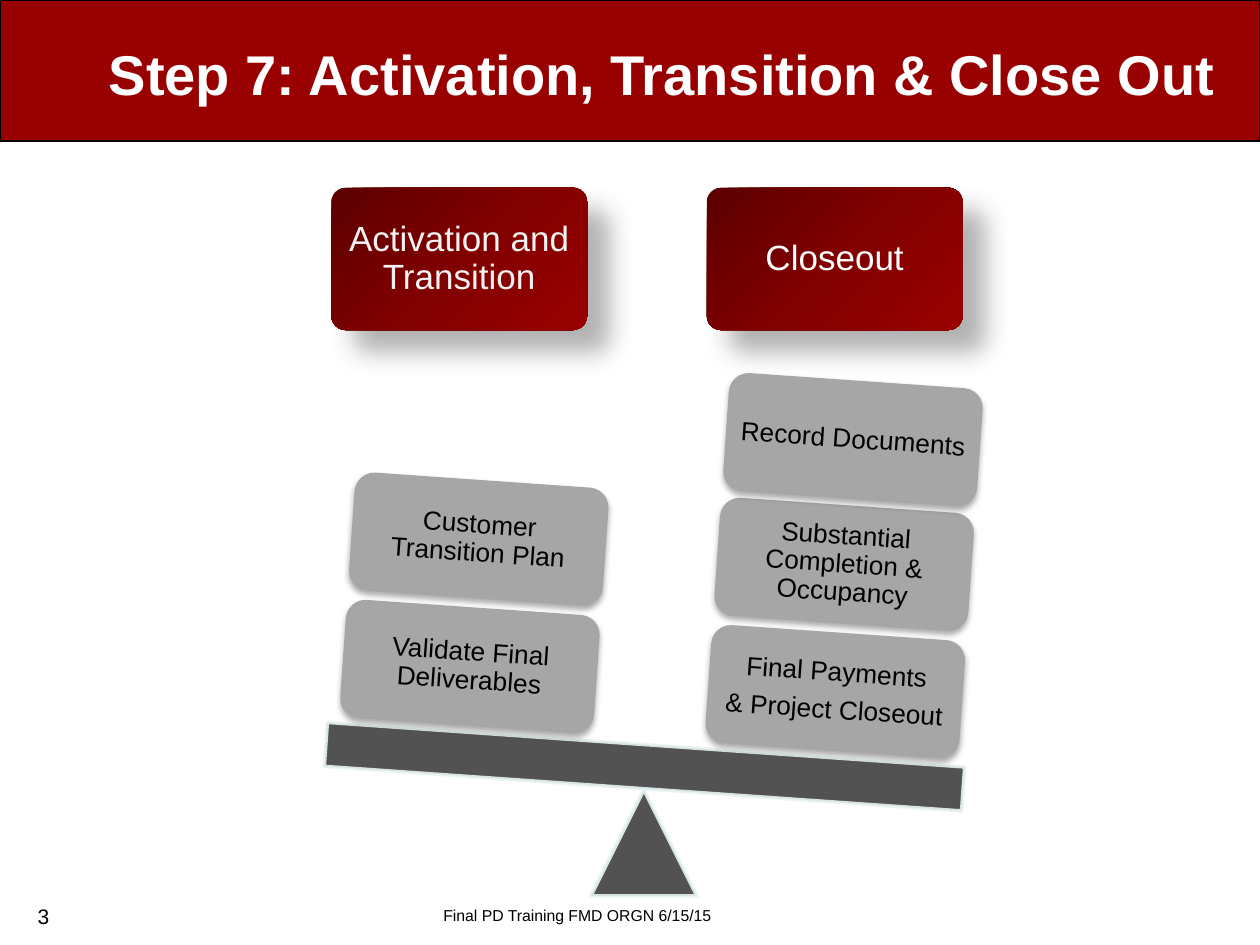
from copy import deepcopy

from lxml.etree import SubElement
from pptx import Presentation
from pptx.dml.color import RGBColor
from pptx.enum.shapes import MSO_SHAPE
from pptx.enum.text import MSO_ANCHOR, PP_ALIGN
from pptx.oxml.ns import qn
from pptx.util import Inches, Pt

RED = RGBColor(0x99, 0x00, 0x00)
MID_RED = RGBColor(0x81, 0x00, 0x00)
DARK_RED = RGBColor(0x5B, 0x00, 0x00)
GRAY = RGBColor(0xA6, 0xA6, 0xA6)
CHARCOAL = RGBColor(0x40, 0x40, 0x40)
PALE = RGBColor(0xE7, 0xF3, 0xF4)
OFF_WHITE = RGBColor(0xF2, 0xF2, 0xF2)
WHITE = RGBColor(0xFF, 0xFF, 0xFF)
BLACK = RGBColor(0x00, 0x00, 0x00)
TILT = 4


def write(sp, text, size, color=BLACK, bold=False, align=PP_ALIGN.LEFT,
          inset=None, spacing=None, after=0):
    tf = sp.text_frame
    tf.word_wrap = True
    tf.vertical_anchor = MSO_ANCHOR.MIDDLE
    if inset is not None:
        tf.margin_left = tf.margin_right = Inches(inset)
        tf.margin_top = tf.margin_bottom = Inches(inset)
    tf.text = text
    for p in tf.paragraphs:
        p.alignment = align
        p.line_spacing = spacing
        p.space_after = Pt(after)
        for r in p.runs:
            r.font.name = "Arial"
            r.font.size = Pt(size)
            r.font.bold = bold
            r.font.color.rgb = color


def add_shadow(sp, blur, dist, angle, alpha):
    sp.shadow.inherit = False
    effects = sp._element.spPr.find(qn("a:effectLst"))
    shadow = SubElement(effects, qn("a:outerShdw"), blurRad=str(Pt(blur)),
                        dist=str(Pt(dist)), dir=str(angle * 60000),
                        algn="tl", rotWithShape="0")
    clr = SubElement(shadow, qn("a:srgbClr"), val=str(BLACK))
    SubElement(clr, qn("a:alpha"), val=str(alpha * 1000))


prs = Presentation()
prs.slide_width, prs.slide_height = Inches(10), Inches(7.5)
s = prs.slides.add_slide(prs.slide_layouts[5])

# Title banner, placed behind the title
banner = s.shapes.add_shape(MSO_SHAPE.RECTANGLE, 0, 0, Inches(10), Inches(1.12))
banner.shadow.inherit = False
banner.fill.solid()
banner.fill.fore_color.rgb = RED
banner.line.color.rgb = BLACK
banner.line.width = Pt(0.75)
title = s.shapes.title
title.left, title.top = Inches(0.25), Inches(0.26)
title.width, title.height = Inches(9.5), Inches(0.64)
write(title, "Step 7: Activation, Transition & Close Out", 32, WHITE,
      bold=True, align=PP_ALIGN.RIGHT)
title._element.addprevious(banner._element)

# Column headings
for x, text, color in [(2.63, "Activation and Transition", OFF_WHITE),
                       (5.61, "Closeout", WHITE)]:
    sp = s.shapes.add_shape(MSO_SHAPE.ROUNDED_RECTANGLE, Inches(x), Inches(1.49),
                            Inches(2.03), Inches(1.13))
    sp.adjustments[0] = 0.1
    sp.line.fill.background()
    sp.fill.gradient()
    sp.fill.gradient_angle = 315
    first, last = sp.fill.gradient_stops
    first.position, first.color.rgb = 0, DARK_RED
    last.position, last.color.rgb = 1, RED
    stops = sp._element.spPr.find(qn("a:gradFill")).find(qn("a:gsLst"))
    stops.insert(1, deepcopy(stops[0]))
    middle = sp.fill.gradient_stops[1]
    middle.position, middle.color.rgb = 0.5, MID_RED
    add_shadow(sp, 15, 18, 45, 30)
    write(sp, text, 20, color, align=PP_ALIGN.CENTER, inset=0.08,
          spacing=0.9, after=7)

# Seesaw: pivot and tilted beam
for kind, x, y, w, h, angle in [
        (MSO_SHAPE.ISOSCELES_TRIANGLE, 4.69, 6.27, 0.84, 0.84, 0),
        (MSO_SHAPE.RECTANGLE, 2.58, 5.91, 5.07, 0.35, TILT)]:
    sp = s.shapes.add_shape(kind, Inches(x), Inches(y), Inches(w), Inches(h))
    sp.rotation = angle
    sp.shadow.inherit = False
    sp.fill.solid()
    sp.fill.fore_color.rgb = CHARCOAL
    sp.line.color.rgb = PALE
    sp.line.width = Pt(2)
    for clr in sp._element.spPr.iter(qn("a:srgbClr")):
        SubElement(clr, qn("a:alpha"), val="90000")

# Blocks stacked on the beam, bottom to top
for x, y, text in [(5.62, 5.02, "Final Payments\n& Project Closeout"),
                   (5.69, 4.01, "Substantial Completion & Occupancy"),
                   (5.76, 3.02, "Record Documents"),
                   (2.72, 4.82, "Validate Final Deliverables"),
                   (2.79, 3.81, "Customer Transition Plan")]:
    sp = s.shapes.add_shape(MSO_SHAPE.ROUNDED_RECTANGLE, Inches(x), Inches(y),
                            Inches(2.02), Inches(0.94))
    sp.rotation = TILT
    sp.fill.solid()
    sp.fill.fore_color.rgb = GRAY
    sp.line.fill.background()
    add_shadow(sp, 3.5, 2.2, 90, 32)
    write(sp, text, 15, align=PP_ALIGN.CENTER, inset=0.06, spacing=0.9, after=5.25)

# Footer and slide number
for x, y, w, h, text, size in [
        (3.42, 7.14, 4.13, 0.25, "Final PD Training FMD ORGN 6/15/15", 9),
        (0.2, 7.12, 0.88, 0.3, "3", 12)]:
    box = s.shapes.add_textbox(Inches(x), Inches(y), Inches(w), Inches(h))
    write(box, text, size)

prs.save("out.pptx")
